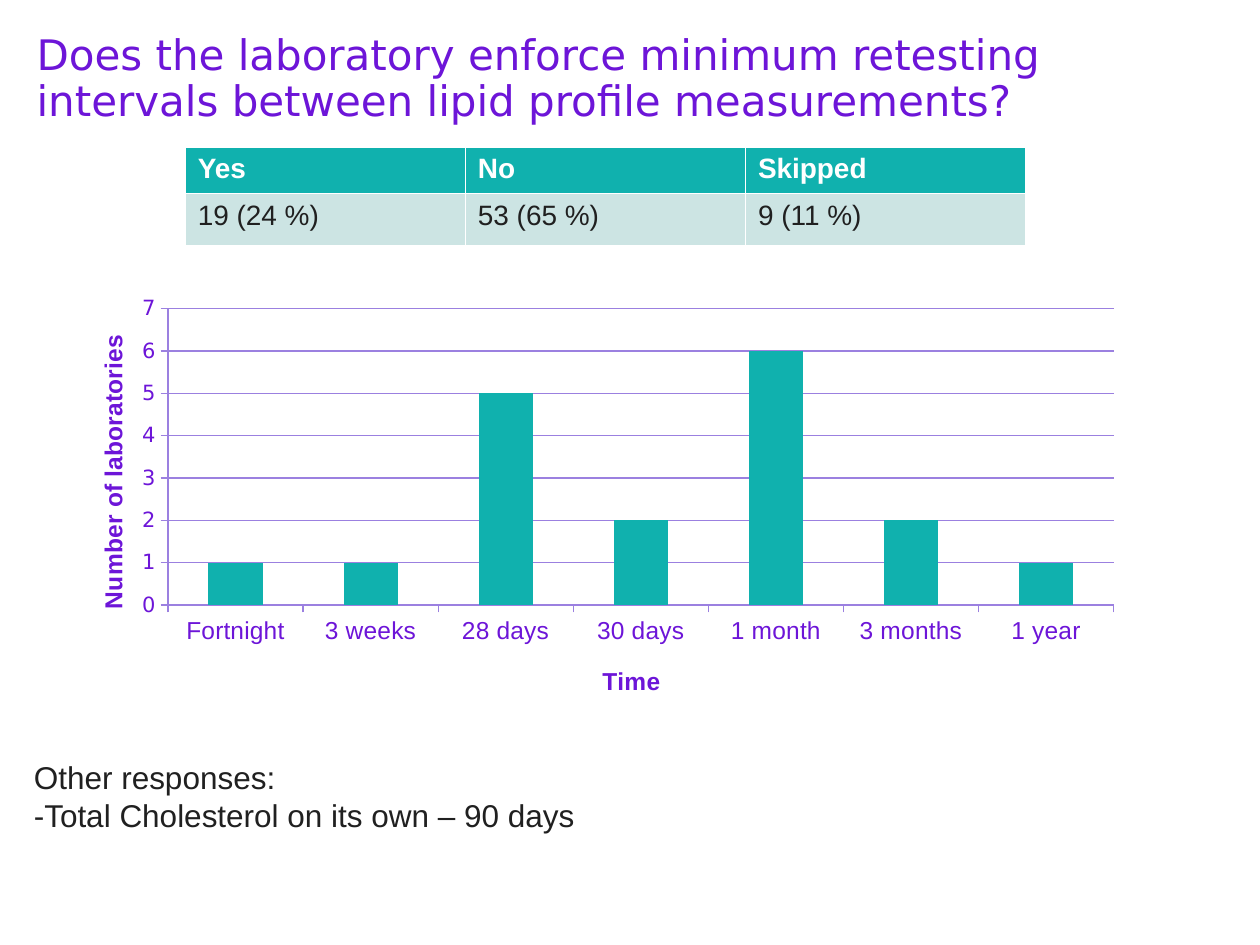
from lxml.etree import SubElement
from pptx import Presentation
from pptx.chart.data import CategoryChartData
from pptx.dml.color import RGBColor
from pptx.enum.chart import XL_CHART_TYPE, XL_TICK_MARK
from pptx.enum.text import MSO_ANCHOR
from pptx.oxml.ns import qn
from pptx.util import Inches, Pt

COLORS = {"purple": "6D15D8", "grid": "9B80E0", "teal": "10B1AE",
          "pale": "CCE4E3", "dark": "202020", "white": "FFFFFF"}


def rgb(name):
    return RGBColor.from_string(COLORS[name])


def style(font, size, color, name="Arial", bold=False):
    font.size, font.name, font.bold = Pt(size), name, bold
    font.color.rgb = rgb(color)


def add_run(p, text, *args, **kwargs):
    r = p.add_run()
    r.text = text
    style(r.font, *args, **kwargs)


def set_layout(parent, index, **shares):
    for old in parent.findall(qn("c:layout")):
        parent.remove(old)
    layout = SubElement(parent, qn("c:layout"))
    parent.insert(index, layout)
    manual = SubElement(layout, qn("c:manualLayout"))
    if "w" in shares:
        SubElement(manual, qn("c:layoutTarget")).set("val", "inner")
    for key in ("x", "y"):
        SubElement(manual, qn(f"c:{key}Mode")).set("val", "edge")
    for key, share in shares.items():
        SubElement(manual, qn(f"c:{key}")).set("val", str(share))


def add_title(s, box, text):
    sp = s.shapes.title
    sp.left, sp.top, sp.width, sp.height = map(Inches, box)
    tf = sp.text_frame
    tf.margin_left = tf.margin_right = tf.margin_top = tf.margin_bottom = 0
    tf.vertical_anchor = MSO_ANCHOR.MIDDLE
    tf.word_wrap = True
    p = tf.paragraphs[0]
    p.alignment = 1
    p.line_spacing = 0.92
    add_run(p, text, 24, "purple", name="DejaVu Sans")


def add_answers(s, box, rows, heights):
    table = s.shapes.add_table(len(rows), len(rows[0]), *map(Inches, box)).table
    table.horz_banding = False
    for i, texts in enumerate(rows):
        table.rows[i].height = Inches(heights[i])
        header = i == 0
        for j, text in enumerate(texts):
            cell = table.cell(i, j)
            cell.fill.solid()
            cell.fill.fore_color.rgb = rgb("teal" if header else "pale")
            add_run(cell.text_frame.paragraphs[0], text, 16,
                    "white" if header else "dark", bold=header)


def format_axis(axis, title, size, font, x, y):
    axis.major_tick_mark = XL_TICK_MARK.OUTSIDE
    axis.minor_tick_mark = XL_TICK_MARK.NONE
    axis.format.line.color.rgb = rgb("grid")
    style(axis.tick_labels.font, size, "purple", name=font)
    p = axis.axis_title.text_frame.paragraphs[0]
    add_run(p, title, 14, "purple", bold=True)
    set_layout(axis.axis_title._element, 1, x=x, y=y)


def add_intervals(s, box, counts):
    data = CategoryChartData()
    data.categories = list(counts)
    data.add_series("Series 1", list(counts.values()))
    chart = s.shapes.add_chart(XL_CHART_TYPE.COLUMN_CLUSTERED,
                               *map(Inches, box), data).chart
    chart.has_legend = chart.has_title = False
    style(chart.font, 10, "purple", name="DejaVu Sans")
    plot = chart.plots[0]
    plot.gap_width = 150
    plot.vary_by_categories = False
    fill = plot.series[0].format.fill
    fill.solid()
    fill.fore_color.rgb = rgb("teal")
    format_axis(chart.category_axis, "Time", 14, "Arial", 0.5, 0.87)
    values = chart.value_axis
    format_axis(values, "Number of laboratories", 12, "DejaVu Sans", 0.03, 0.1)
    values.minimum_scale, values.maximum_scale, values.major_unit = 0, 7, 1
    values.major_gridlines.format.line.color.rgb = rgb("grid")
    plot_area = chart._chartSpace.chart.plotArea
    set_layout(plot_area, 0, x=0.1, y=0.05, w=0.88, h=0.69)


def add_notes_box(s, box, lines):
    tf = s.shapes.add_textbox(*map(Inches, box)).text_frame
    tf.word_wrap = True
    for i, line in enumerate(lines):
        p = tf.add_paragraph() if i else tf.paragraphs[0]
        add_run(p, line, 18, "dark")


def main():
    prs = Presentation()
    prs.slide_width, prs.slide_height = Inches(10), Inches(7.5)
    s = prs.slides.add_slide(prs.slide_layouts[5])
    add_title(s, (0.29, 0.26, 9.42, 0.74),
              "Does the laboratory enforce minimum retesting intervals "
              "between lipid profile measurements?")
    add_notes_box(s, (0.17, 5.97, 9.65, 0.71),
                  ["Other responses:", "-Total Cholesterol on its own – 90 days"])
    add_answers(s, (1.47, 1.17, 6.67, 0.77),
                [["Yes", "No", "Skipped"],
                 ["19 (24 %)", "53 (65 %)", "9 (11 %)"]], (0.36, 0.41))
    add_intervals(s, (0.48, 2.28, 8.53, 3.41),
                  {"Fortnight": 1, "3 weeks": 1, "28 days": 5, "30 days": 2,
                   "1 month": 6, "3 months": 2, "1 year": 1})
    prs.save("out.pptx")


if __name__ == "__main__":
    main()
